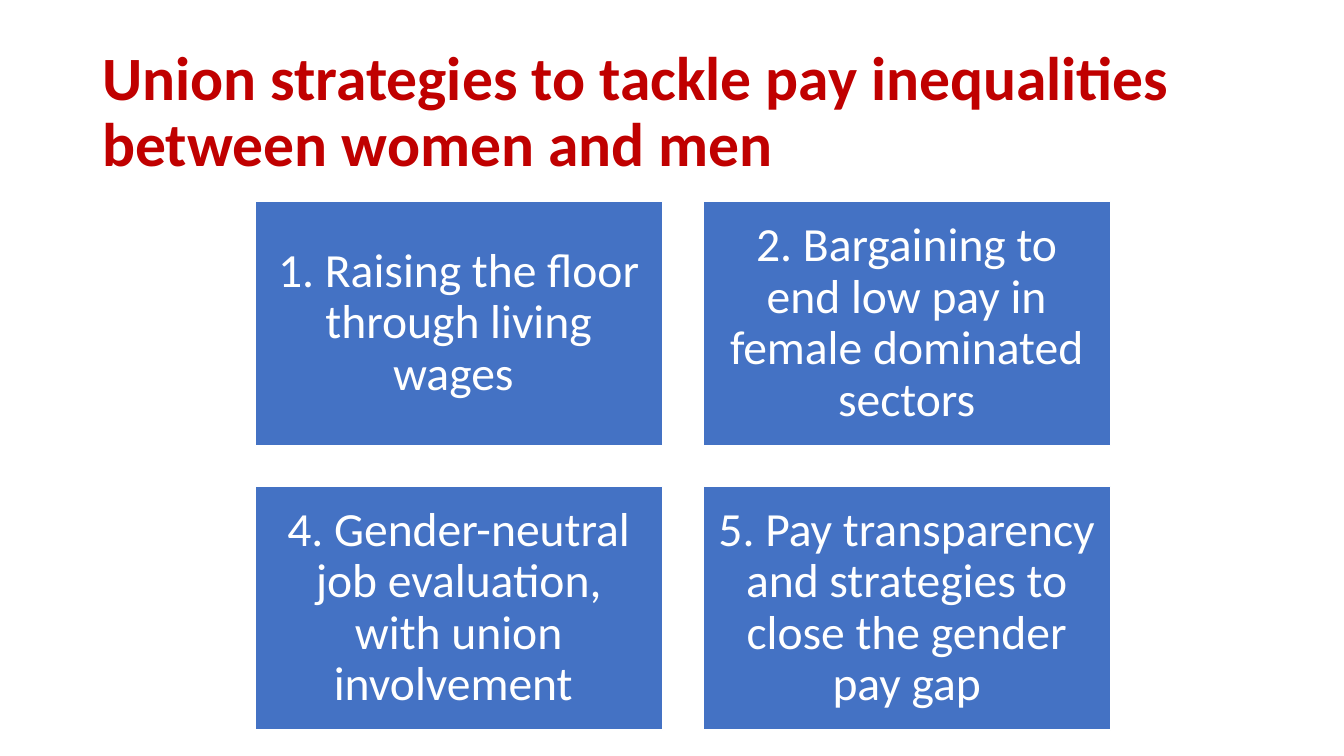
from pptx import Presentation
from pptx.dml.color import RGBColor
from pptx.enum.shapes import MSO_SHAPE
from pptx.enum.text import MSO_ANCHOR, PP_ALIGN
from pptx.util import Pt

RED = RGBColor(0xC0, 0x00, 0x00)
BLUE = RGBColor(0x44, 0x72, 0xC4)
WHITE = RGBColor(0xFF, 0xFF, 0xFF)
RECT = MSO_SHAPE.RECTANGLE
MIDDLE = MSO_ANCHOR.MIDDLE
LEFT, CENTER = PP_ALIGN.LEFT, PP_ALIGN.CENTER

STRATEGIES = [
    "1. Raising the floor through living wages ",
    "2. Bargaining to end low pay in female dominated sectors",
    "4. Gender-neutral job evaluation, with union involvement ",
    "5. Pay transparency and strategies to close the gender pay gap",
]
COLUMNS = 2
GRID_LEFT, GRID_TOP = 182.2, 144
BOX_W, BOX_H = 290.9, 174.2
GAP = 29.1


class SlideBuilder:
    font = "Calibri"
    line_spacing = 0.9
    inset = 10

    def __init__(self, prs):
        self.slide = prs.slides.add_slide(prs.slide_layouts[6])

    def set_text(self, sp, text, size, color, align, bold=False):
        tf = sp.text_frame
        tf.text = text
        tf.word_wrap = True
        tf.vertical_anchor = MIDDLE
        p = tf.paragraphs[0]
        p.alignment = align
        p.line_spacing = self.line_spacing
        font = p.runs[0].font
        font.name = self.font
        font.size = Pt(size)
        font.bold = bold
        font.color.rgb = color
        return tf

    def title(self, text, x, y, w, h):
        sp = self.slide.shapes.add_textbox(Pt(x), Pt(y), Pt(w), Pt(h))
        self.set_text(sp, text, 44, RED, LEFT, bold=True)

    def box(self, text, x, y, w, h):
        sp = self.slide.shapes.add_shape(RECT, Pt(x), Pt(y), Pt(w), Pt(h))
        sp.shadow.inherit = False
        sp.fill.solid()
        sp.fill.fore_color.rgb = BLUE
        sp.line.color.rgb = WHITE
        sp.line.width = Pt(1)
        tf = self.set_text(sp, text, 34, WHITE, CENTER)
        tf.margin_left = tf.margin_right = Pt(self.inset)
        tf.margin_top = tf.margin_bottom = Pt(self.inset)


def main():
    prs = Presentation()
    prs.slide_width, prs.slide_height = Pt(960), Pt(540)
    s = SlideBuilder(prs)
    s.title("Union strategies to tackle pay inequalities between women and men",
            66, 28.8, 828, 104.4)
    for i, strategy in enumerate(STRATEGIES):
        row, col = divmod(i, COLUMNS)
        s.box(strategy, GRID_LEFT + col * (BOX_W + GAP),
              GRID_TOP + row * (BOX_H + GAP), BOX_W, BOX_H)
    prs.save("out.pptx")


if __name__ == "__main__":
    main()
